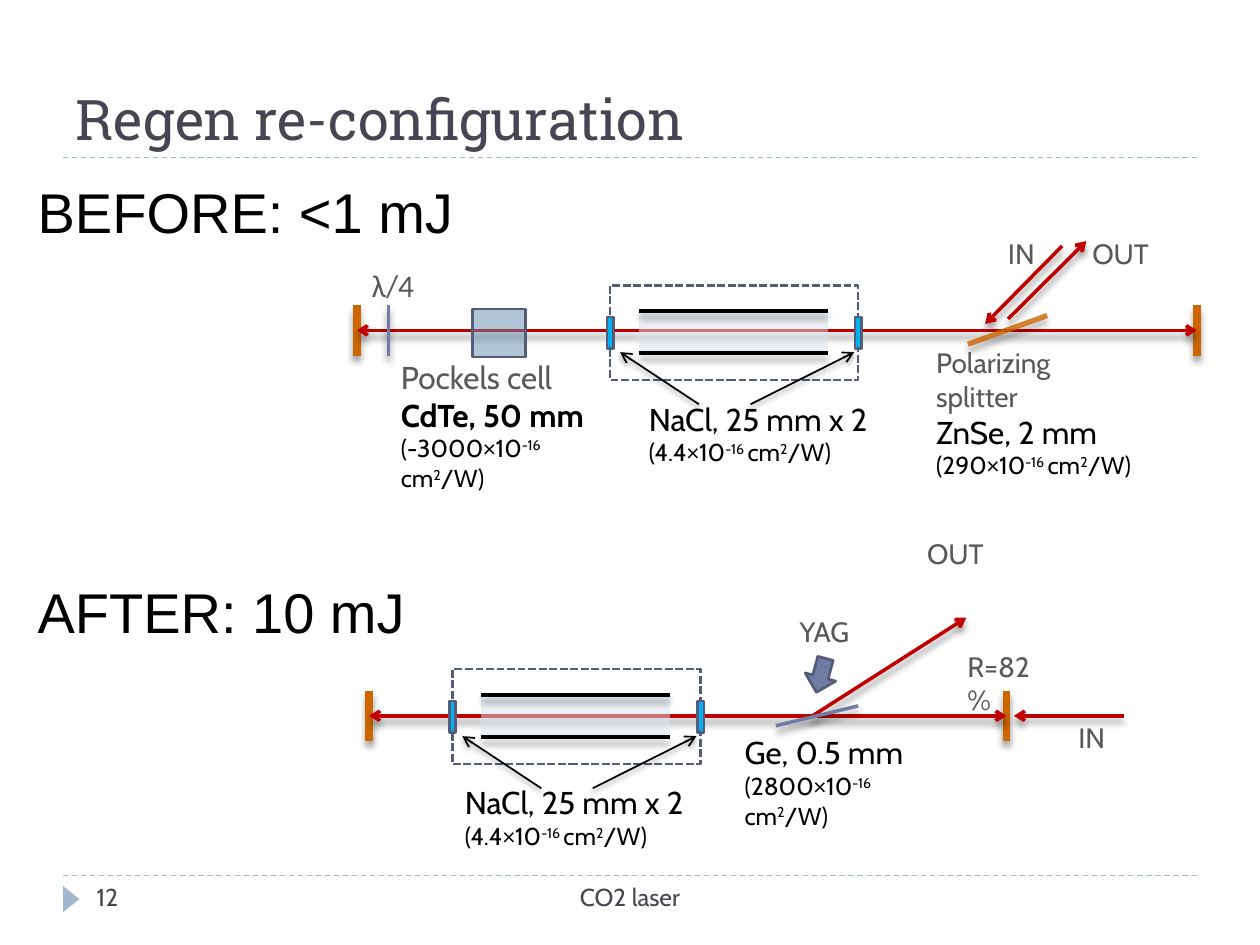
from dataclasses import dataclass

from lxml import etree
from pptx import Presentation
from pptx.dml.color import RGBColor
from pptx.enum.dml import MSO_LINE_DASH_STYLE as Dash
from pptx.enum.shapes import MSO_CONNECTOR as Link, MSO_SHAPE as Preset
from pptx.enum.text import MSO_ANCHOR as Anchor, PP_ALIGN as Align
from pptx.oxml.ns import qn
from pptx.util import Cm, Pt


@dataclass(frozen=True)
class Theme:
    ink: str = "000000"
    title: str = "464653"
    muted: str = "595959"
    pale: str = "9FB8CD"
    beam: str = "C00000"
    mirror: str = "CC6600"
    plate: str = "727CA3"
    outline: str = "545C79"
    window: str = "00B0F0"
    gas: str = "D9E3EB"
    crystal: str = "638CAE"
    body_font: str = "Cabin"
    title_font: str = "Roboto Slab"
    heading_font: str = "Arial"
    symbol_font: str = "Calibri"
    large: int = 32
    medium: int = 18
    small: int = 16
    tiny: int = 14


THEME = Theme()
LABEL = {"size": THEME.small, "name": THEME.body_font, "color": THEME.muted}
NAME = {**LABEL, "size": THEME.medium}
MATERIAL = {**NAME, "color": THEME.ink}
DETAIL = {**MATERIAL, "size": THEME.tiny}
FOOTER = {**DETAIL, "color": THEME.title}
HEADING = {"size": THEME.large, "name": THEME.heading_font, "color": THEME.ink}
TITLE = {"size": THEME.large, "name": THEME.title_font, "color": THEME.title}
RAISED = {**DETAIL, "raised": True}


def add_alpha(fill, percent):
    color = fill.find(".//" + qn("a:srgbClr"))
    etree.SubElement(color, qn("a:alpha"), val=str(percent * 1000))


def add_text(page, box, paragraphs, align=Align.LEFT, anchor=Anchor.TOP):
    frame = page.shapes.add_textbox(*map(Cm, box)).text_frame
    for key, value in {"word_wrap": True, "vertical_anchor": anchor}.items():
        setattr(frame, key, value)
    for index, spans in enumerate(paragraphs):
        para = frame.add_paragraph() if index else frame.paragraphs[0]
        para.alignment = align
        for text, style in spans:
            span = para.add_run()
            span.text = text
            font = {"size": Pt(style["size"]), "name": style["name"], "bold": style.get("bold", False)}
            for key, value in font.items():
                setattr(span.font, key, value)
            span.font.color.rgb = RGBColor.from_string(style["color"])
            if style.get("raised"):
                span._r.get_or_add_rPr().set("baseline", "30000")


def add_line(page, start, end, color, width=2, ends="", dash=None, alpha=100, shadow=(4, 3.4)):
    line = page.shapes.add_connector(Link.STRAIGHT, *map(Cm, (*start, *end)))
    line.line.width = Pt(width)
    line.line.color.rgb = RGBColor.from_string(color)
    if dash:
        line.line.dash_style = dash
    properties = line._element.spPr
    stroke = properties.find(qn("a:ln"))
    if alpha < 100:
        add_alpha(stroke, alpha)
    for tag in ends.split():
        etree.SubElement(stroke, qn(f"a:{tag}"), type="arrow")
    effects = etree.SubElement(properties, qn("a:effectLst"))
    if shadow:
        blur, distance = (str(Pt(size)) for size in shadow)
        cast = etree.SubElement(effects, qn("a:outerShdw"), blurRad=blur, dist=distance,
                                dir="5400000", rotWithShape="0")
        color = etree.SubElement(cast, qn("a:srgbClr"), val=THEME.ink)
        etree.SubElement(color, qn("a:alpha"), val="40000")


def add_block(page, box, fill=None, line=None, preset=Preset.RECTANGLE, alpha=100, turn=0, dash=None):
    shape = page.shapes.add_shape(preset, *map(Cm, box))
    shape.shadow.inherit = False
    shape.rotation = turn
    if fill:
        shape.fill.solid()
        shape.fill.fore_color.rgb = RGBColor.from_string(fill)
        if alpha < 100:
            add_alpha(shape._element.spPr, alpha)
    else:
        shape.fill.background()
    if line:
        shape.line.color.rgb = RGBColor.from_string(line)
        shape.line.width = Pt(1.5)
        if dash:
            shape.line.dash_style = dash
    else:
        shape.line.fill.background()


def nonlinear_index(value):
    return [(f"({value}", DETAIL), ("×", {**DETAIL, "name": THEME.symbol_font}), ("10", DETAIL),
            ("-16 ", RAISED), ("cm", DETAIL), ("2", RAISED), ("/W)", DETAIL)]


def draw_frame(page, box):
    left, top, width, height = box
    for y in (top, top + height):
        add_line(page, (left, y), (left + width, y), THEME.pale, 0.75, dash=Dash.DASH, shadow=None)
    bottom = top + height
    add_block(page, (left - 0.1, bottom + 0.31, 0.53, 0.33), THEME.pale,
              preset=Preset.ISOSCELES_TRIANGLE, turn=90)
    add_text(page, (left, top - 2.75, width, 2.75), [[("Regen re-configuration", TITLE)]], anchor=Anchor.BOTTOM)
    add_text(page, (left + 3.39, bottom, 16.08, 1.02), [[("CO2 laser", FOOTER)]], Align.CENTER)
    add_text(page, (left + 0.43, bottom, 2.74, 1.02), [[("12", FOOTER)]])


def draw_gas_cell(page, box, label_shift):
    left, top, width, height = box
    add_block(page, box, line=THEME.outline, dash=Dash.SQUARE_DOT)
    slab_left, slab_top, slab_width, slab_height = left + 0.58, top + 0.52, 3.81, 0.85
    add_block(page, (slab_left, slab_top, slab_width, slab_height), THEME.gas, alpha=50)
    for y in (slab_top, slab_top + slab_height):
        add_line(page, (slab_left, y), (slab_left + slab_width, y), THEME.ink)
    for x in (left, left + width):
        add_block(page, (x - 0.06, top + 0.64, 0.13, 0.64), THEME.window, THEME.outline)
    add_text(page, (left + label_shift, top + height + 0.27, 4.95, 1.63),
             [[("NaCl, 25 mm x 2", MATERIAL)], nonlinear_index("4.4")])
    for start, end in ((1.79, 0.2), (2.83, width - 0.08)):
        add_line(page, (left + start, top + 2.4), (left + end, top + 1.35), THEME.ink, 1,
                 "tailEnd", shadow=(3, 2))


def draw_cavity(page, box, heading, heading_rise):
    left, axis, width = box
    for x in (left, left + width):
        add_line(page, (x, axis - 0.51), (x, axis + 0.51), THEME.mirror, 4.5)
    add_line(page, (left, axis), (left + width, axis), THEME.beam, ends="headEnd tailEnd")
    add_text(page, (0.51, axis - heading_rise, 8.97, 1.63), [[(heading, HEADING)]])


def draw_before(page, box):
    left, axis, width = box
    draw_cavity(page, box, "BEFORE: <1 mJ", 3.2)
    add_line(page, (left + 0.64, axis - 0.51), (left + 0.64, axis + 0.51), THEME.plate)
    add_block(page, (left + 2.34, axis - 0.43, 1.07, 0.97), THEME.crystal, THEME.outline, alpha=50)
    draw_gas_cell(page, (left + 5.11, axis - 0.91, 5, 1.91), 0.53)
    add_line(page, (left + 13.92, axis - 0.3), (left + 12.32, axis + 0.28), THEME.mirror, 3, alpha=80)
    for start, end in (((14.22, -1.7), (12.67, -0.13)), ((13.13, -0.23), (14.71, -1.8))):
        add_line(page, (left + start[0], axis + start[1]), (left + end[0], axis + end[1]),
                 THEME.beam, ends="tailEnd")
    add_text(page, (left + 12.88, axis - 2.01, 1.09, 0.94), [[("IN", LABEL)]])
    add_text(page, (left + 14.58, axis - 2.01, 1.73, 0.94), [[("OUT", LABEL)]])
    add_text(page, (left + 0.05, axis - 1.42, 1.4, 1.02),
             [[("λ/4", {**NAME, "name": THEME.symbol_font})]])
    add_text(page, (left + 11.43, axis + 0.18, 4.52, 2.31),
             [[("Polarizing splitter", LABEL)], [("ZnSe, 2 mm", MATERIAL)], nonlinear_index("290")])
    add_text(page, (left + 0.64, axis + 0.43, 4.75, 2.39),
             [[("Pockels cell", NAME)], [("CdTe, 50 mm", {**MATERIAL, "bold": True})],
              nonlinear_index("-3000")])


def draw_after(page, box):
    left, axis, width = box
    draw_cavity(page, box, "AFTER: 10 mJ", 2.92)
    draw_gas_cell(page, (left + 1.68, axis - 0.94, 5, 1.91), 0)
    add_line(page, (left + 8.94, axis), (left + 12.04, axis - 1.98), THEME.beam, ends="tailEnd")
    add_line(page, (left + 8.2, axis + 0.2), (left + 9.86, axis - 0.2), THEME.plate)
    add_line(page, (left + 15.21, axis), (left + width + 0.15, axis), THEME.beam, ends="tailEnd")
    add_block(page, (left + 8.79, axis - 1.17, 0.64, 0.71), THEME.plate, THEME.outline,
              Preset.DOWN_ARROW, turn=15)
    for text, x, y, size in (("YAG", 8.43, -2.16, 1.57), ("R=82%", 11.81, -1.47, 2.16),
                             ("IN", 14.05, -0.03, 1.09), ("OUT", 11, -3.73, 1.73)):
        add_text(page, (left + x, axis + y, size, 0.94), [[(text, LABEL)]])
    add_text(page, (left + 7.32, axis + 0.23, 4.57, 1.63),
             [[("Ge, 0.5 mm", MATERIAL)], nonlinear_index("2800")])


def main():
    deck = Presentation()
    deck.slide_width, deck.slide_height = Cm(25.4), Cm(19.05)
    page = deck.slides.add_slide(deck.slide_layouts[6])
    draw_frame(page, (1.27, 3.18, 22.86, 14.47))
    draw_after(page, (7.44, 14.43, 12.85))
    draw_before(page, (7.19, 6.66, 16.94))
    deck.save("out.pptx")


if __name__ == "__main__":
    main()
